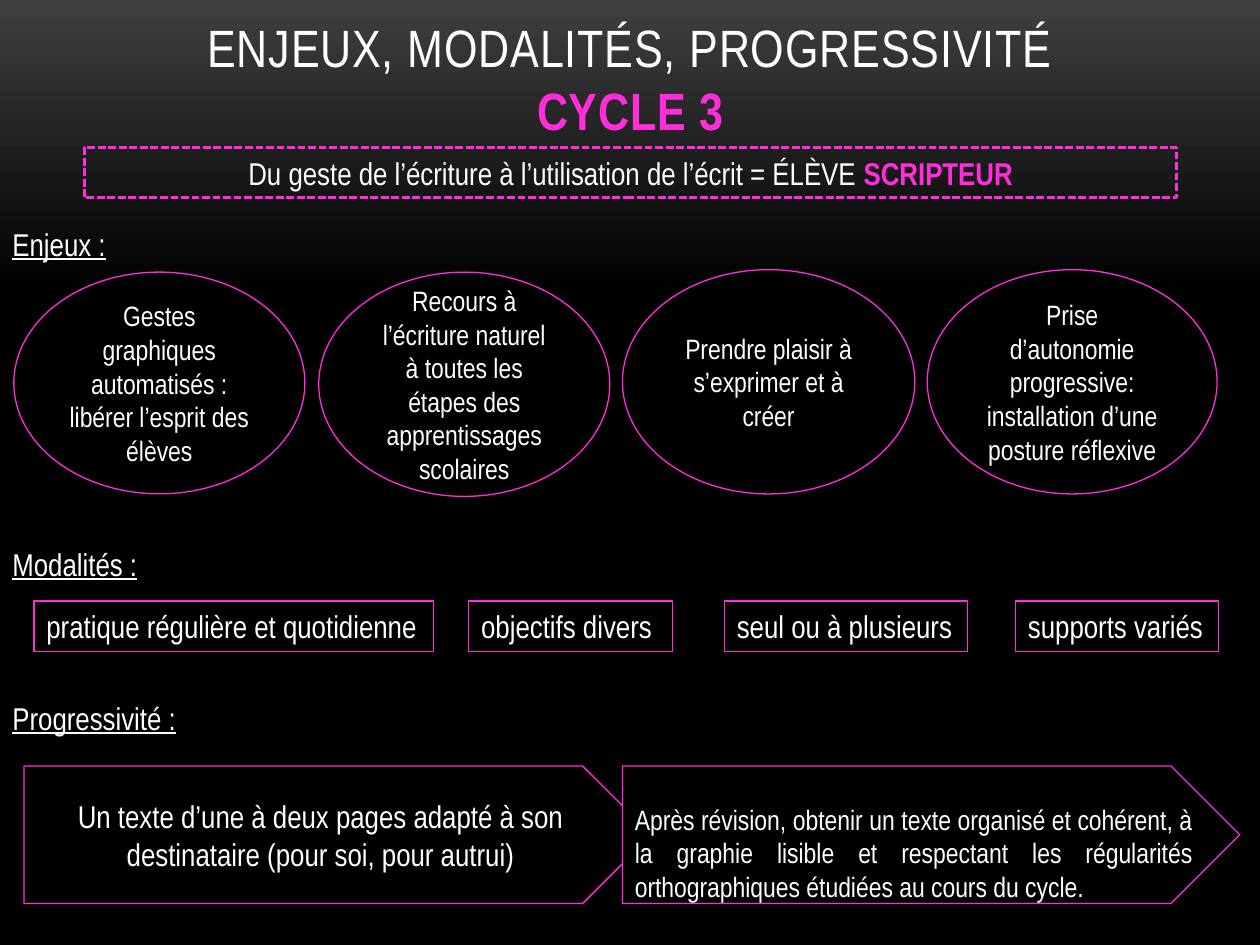
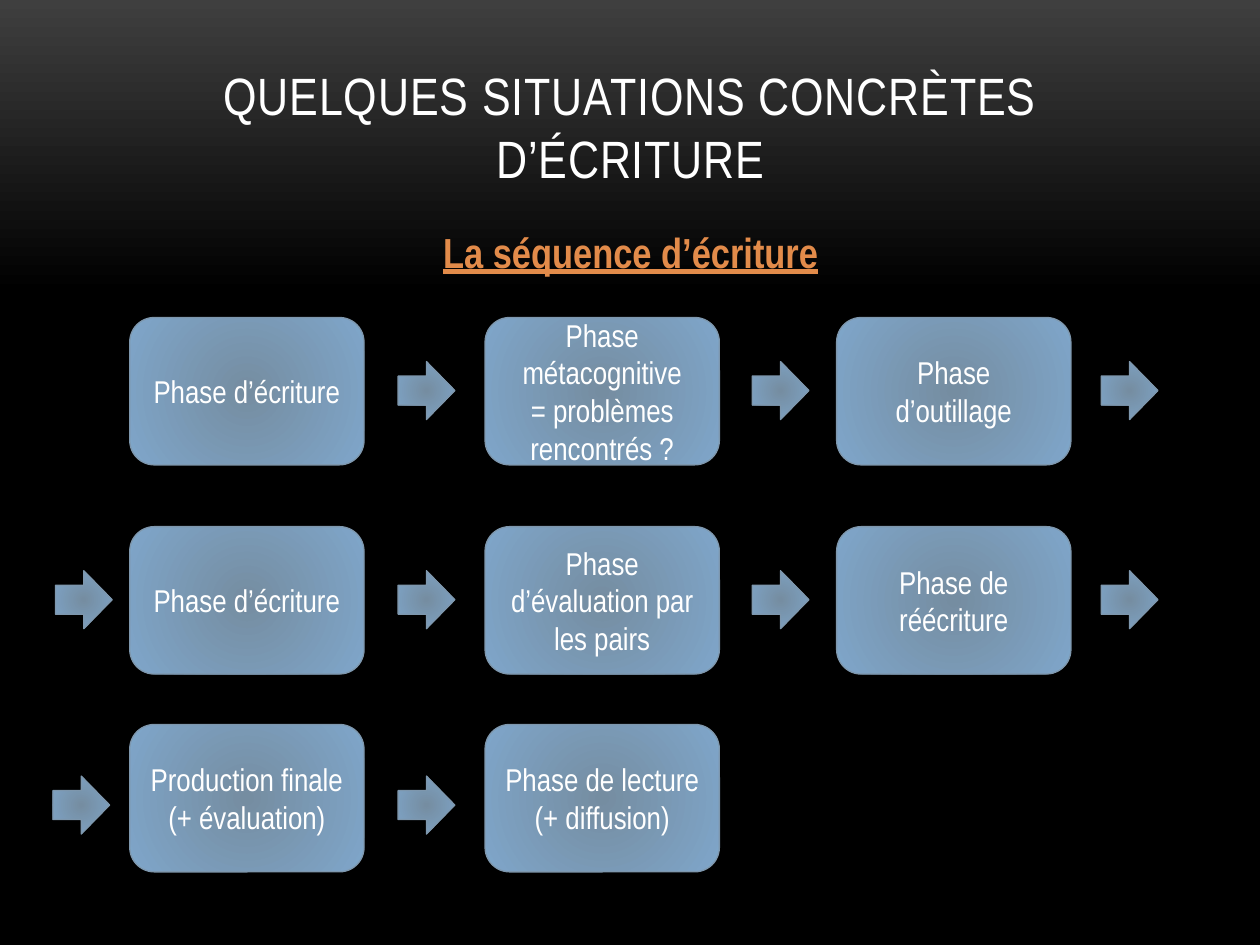
from dataclasses import dataclass

from lxml import etree
from pptx import Presentation
from pptx.dml.color import RGBColor
from pptx.enum.dml import MSO_LINE
from pptx.enum.shapes import MSO_SHAPE as Shp
from pptx.enum.text import MSO_ANCHOR as Anchor
from pptx.enum.text import MSO_AUTO_SIZE as AutoSize
from pptx.enum.text import PP_ALIGN as Align
from pptx.oxml.ns import qn
from pptx.util import Inches, Pt

FONT = "Arial Narrow"
COLORS = {
    "white": "FFFFFF", "black": "000000", "grey": "3F3F3F", "pink": "FF2DDA",
    "orange": "E28B4A", "steel": "7E97AD", "core": "758DA1", "rim": "7FA6CA",
}


@dataclass
class Box:
    x: float
    y: float
    w: float
    h: float
    text: str = ""

    def place(self) -> tuple:
        return Inches(self.x), Inches(self.y), Inches(self.w), Inches(self.h)


# Shared styling
def rgb(name: str) -> RGBColor:
    return RGBColor.from_string(COLORS[name])


def style_run(r, size: float, color: str = "white", bold: bool = False,
              underline: bool = False) -> None:
    f = r.font
    f.name, f.size, f.bold, f.underline = FONT, Pt(size), bold, underline
    f.color.rgb = rgb(color)


def write(tf, text: str, size: float, align=Align.CENTER, anchor=Anchor.MIDDLE,
          underline: bool = False) -> None:
    tf.word_wrap = True
    tf.vertical_anchor = anchor
    tf.text = text
    for p in tf.paragraphs:
        p.alignment = align
        for r in p.runs:
            style_run(r, size, underline=underline)


def fit_on_one_line(tf) -> None:
    tf.word_wrap = False
    tf.auto_size = AutoSize.SHAPE_TO_FIT_TEXT


def set_gradient(fill, *stops: tuple[float, str]) -> None:
    fill.gradient()
    for stop, (position, color) in zip(fill.gradient_stops, stops):
        stop.position = position
        stop.color.rgb = rgb(color)


def add_outlined(s, kind, box: Box, line: str = "pink", width: float = 0.75,
                 fill: str | None = None):
    sp = s.shapes.add_shape(kind, *box.place())
    sp.shadow.inherit = False
    sp.line.color.rgb = rgb(line)
    sp.line.width = Pt(width)
    if fill:
        sp.fill.solid()
        sp.fill.fore_color.rgb = rgb(fill)
    else:
        sp.fill.background()
    return sp


def add_steel(s, kind, box: Box):
    """Shape with the radial blue fill."""
    sp = add_outlined(s, kind, box, "steel")
    set_gradient(sp.fill, (0, "core"), (1, "rim"))
    grad = sp._element.spPr.find(qn("a:gradFill"))
    grad.remove(grad.find(qn("a:lin")))
    radial = etree.SubElement(grad, qn("a:path"), path="circle")
    etree.SubElement(radial, qn("a:fillToRect"),
                     {side: "50000" for side in "ltrb"})
    if box.text:
        write(sp.text_frame, box.text, 18)
    return sp


def set_title(s, box: Box):
    title = s.shapes.title
    title.left, title.top, title.width, title.height = box.place()
    tf = title.text_frame
    tf.auto_size = AutoSize.NONE
    write(tf, box.text, 30, anchor=Anchor.BOTTOM)
    for r in tf.paragraphs[0].runs:
        r.font._element.set("spc", "50")
    return title


# Slide 1: aims, methods and progression
LABELS = [
    Box(0, 1.74, 0.95, 0.4, "Enjeux :"),
    Box(0, 4.28, 1.2, 0.4, "Modalités :"),
    Box(0, 5.5, 1.51, 0.4, "Progressivité :"),
]
AIMS = [
    Box(0.11, 2.16, 2.31, 1.76,
        "Gestes graphiques automatisés : libérer l’esprit des élèves"),
    Box(2.53, 2.16, 2.31, 1.78, "Recours à l’écriture naturel à toutes les "
        "étapes des apprentissages scolaires"),
    Box(4.94, 2.14, 2.32, 1.78, "Prendre plaisir à s’exprimer et à créer"),
    Box(7.36, 2.14, 2.3, 1.78, "Prise d’autonomie progressive: installation "
        "d’une posture réflexive"),
]
METHODS = [
    Box(0.27, 4.77, 3.17, 0.4, "pratique régulière et quotidienne"),
    Box(3.72, 4.77, 1.62, 0.4, "objectifs divers"),
    Box(5.75, 4.77, 1.93, 0.4, "seul ou à plusieurs"),
    Box(8.06, 4.77, 1.61, 0.4, "supports variés"),
]
FIRST_STAGE = Box(0.19, 6.08, 4.98, 1.09, "Un texte d’une à deux pages adapté à "
                  "son destinataire (pour soi, pour autrui)")
SECOND_STAGE = Box(4.94, 6.08, 4.9, 1.09, "Après révision, obtenir un texte "
                   "organisé et cohérent, à la graphie lisible et respectant les "
                   "régularités orthographiques étudiées au cours du cycle.")


def build_cycle(prs) -> None:
    s = prs.slides.add_slide(prs.slide_layouts[5])
    title = set_title(s, Box(0.67, 0.1, 8.67, 1.07,
                             "ENJEUX, MODALITÉS, PROGRESSIVITÉ\vCYCLE 3"))
    cycle = title.text_frame.paragraphs[0].runs[1]
    cycle.font.bold = True
    cycle.font.color.rgb = rgb("pink")

    # Dashed banner
    banner = Box(0.67, 1.17, 8.67, 0.4,
                 "Du geste de l’écriture à l’utilisation de l’écrit = ÉLÈVE ")
    sp = add_outlined(s, Shp.RECTANGLE, banner, width=1.5)
    sp.line.dash_style = MSO_LINE.SQUARE_DOT
    write(sp.text_frame, banner.text, 18, anchor=Anchor.TOP)
    r = sp.text_frame.paragraphs[0].add_run()
    r.text = "SCRIPTEUR"
    style_run(r, 18, "pink", bold=True)

    for aim in AIMS:
        sp = add_outlined(s, Shp.OVAL, aim)
        write(sp.text_frame, aim.text, 16)
    for method in METHODS:
        sp = add_outlined(s, Shp.RECTANGLE, method)
        write(sp.text_frame, method.text, 18, Align.LEFT, Anchor.TOP)
        fit_on_one_line(sp.text_frame)
    for label in LABELS:
        tf = s.shapes.add_textbox(*label.place()).text_frame
        write(tf, label.text, 18, Align.LEFT, Anchor.TOP, underline=True)
        fit_on_one_line(tf)

    # Progression arrows, the second over the tip of the first
    sp = add_outlined(s, Shp.PENTAGON, FIRST_STAGE, fill="black")
    write(sp.text_frame, FIRST_STAGE.text, 18)
    sp = add_outlined(s, Shp.PENTAGON, SECOND_STAGE, fill="black")
    write(sp.text_frame, SECOND_STAGE.text, 16, Align.JUSTIFY)
    sp.text_frame.margin_top = Inches(0.28)
    sp.text_frame.margin_bottom = 0


# Slide 2: the writing sequence
PHASE_X = [1.03, 3.85, 6.64]
ARROW_X = [3.16, 5.97, 8.74]


@dataclass
class PhaseRow:
    y: float
    arrow_y: float
    entry_x: float | None
    phases: list[str]
    arrows: int


ROWS = [
    PhaseRow(2.52, 2.87, None,
             ["Phase d’écriture", "Phase métacognitive\n= problèmes rencontrés ?",
              "Phase d’outillage"], 3),
    PhaseRow(4.18, 4.53, 0.44,
             ["Phase d’écriture", "Phase d’évaluation par les pairs",
              "Phase de réécriture"], 3),
    PhaseRow(5.75, 6.16, 0.42,
             ["Production finale (+ évaluation)",
              "Phase de lecture (+ diffusion)"], 1),
]


def build_sequence(prs) -> None:
    s = prs.slides.add_slide(prs.slide_layouts[1])
    set_title(s, Box(0.67, 0.3, 8.67, 1.25,
                     "QUELQUES SITUATIONS CONCRÈTES D’ÉCRITURE"))

    # Subtitle without bullet
    subtitle = Box(0.67, 1.75, 8.67, 4.5, "La séquence d’écriture")
    body = s.placeholders[1]
    body.left, body.top, body.width, body.height = subtitle.place()
    tf = body.text_frame
    write(tf, subtitle.text, 24, anchor=Anchor.TOP)
    p = tf.paragraphs[0]
    p_pr = p._p.get_or_add_pPr()
    p_pr.set("marL", "0")
    p_pr.set("indent", "0")
    etree.SubElement(p_pr, qn("a:buNone"))
    p.space_before, p.space_after = Pt(0), Pt(6)
    style_run(p.runs[0], 24, "orange", bold=True, underline=True)

    # Rows of phases and arrows
    for row in ROWS:
        for x, text in zip(PHASE_X, row.phases):
            add_steel(s, Shp.ROUNDED_RECTANGLE, Box(x, row.y, 1.86, 1.17, text))
        arrow_xs = ARROW_X[:row.arrows]
        if row.entry_x is not None:
            arrow_xs = [row.entry_x, *arrow_xs]
        for x in arrow_xs:
            add_steel(s, Shp.RIGHT_ARROW, Box(x, row.arrow_y, 0.45, 0.46))


def main() -> None:
    prs = Presentation()
    prs.slide_width, prs.slide_height = Inches(10), Inches(7.5)
    background = prs.slide_master.background.fill
    set_gradient(background, (0, "grey"), (0.31, "black"))
    background.gradient_angle = 270
    build_cycle(prs)
    build_sequence(prs)
    prs.save("out.pptx")


if __name__ == "__main__":
    main()
